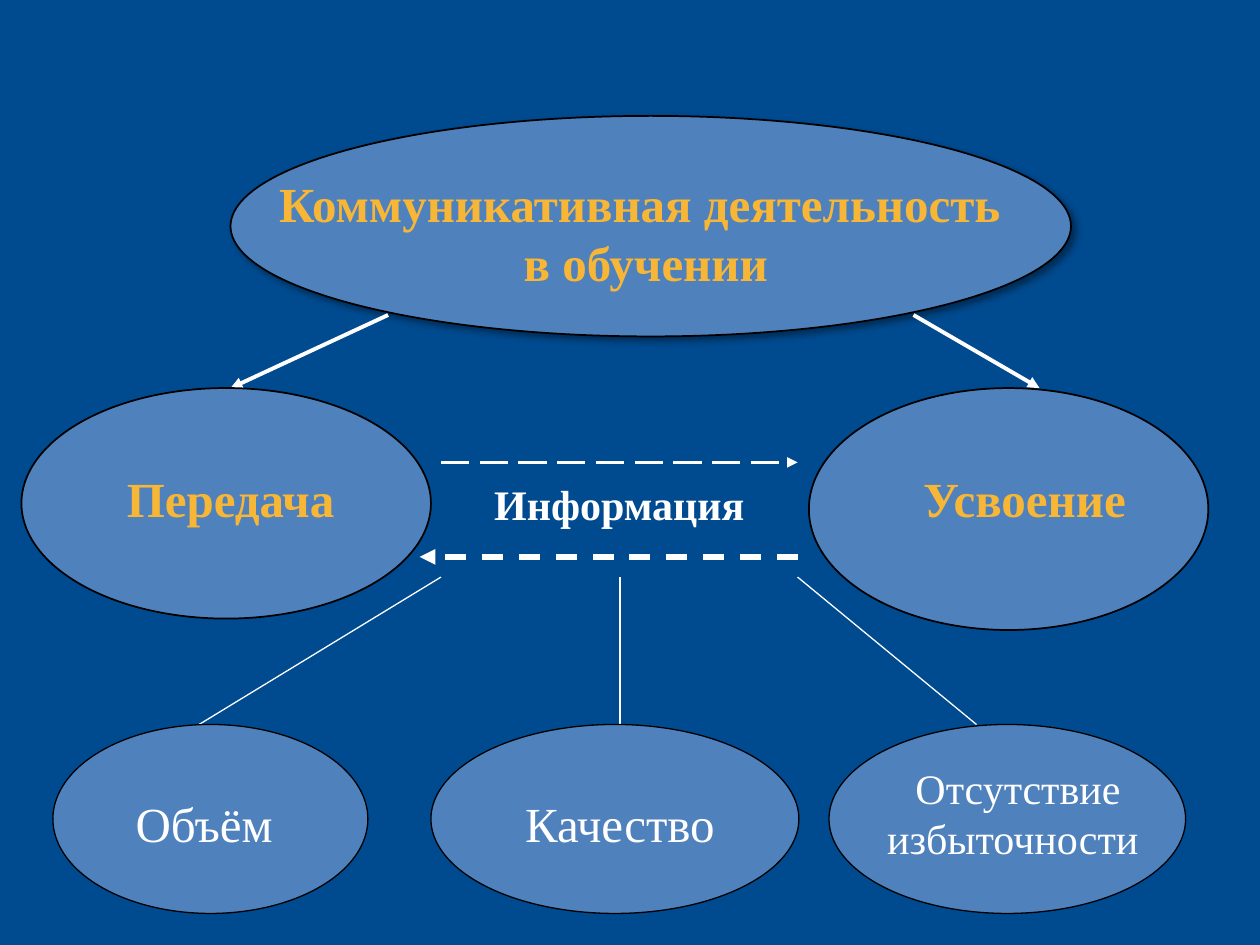
import lxml.etree
import pptx
import pptx.dml.color
import pptx.enum.dml
import pptx.enum.shapes
import pptx.enum.text
import pptx.oxml.ns
import pptx.util

Inches = pptx.util.Inches
Pt = pptx.util.Pt
RGBColor = pptx.dml.color.RGBColor
Dash = pptx.enum.dml.MSO_LINE
qn = pptx.oxml.ns.qn

NAVY = RGBColor(0x00, 0x4A, 0x8F)
BLUE = RGBColor(0x4F, 0x81, 0xBD)
GOLD = RGBColor(0xF7, 0xB6, 0x35)
WHITE = RGBColor(0xFF, 0xFF, 0xFF)
BLACK = RGBColor(0x00, 0x00, 0x00)
FONT = "Times New Roman"


def write_text(shape, text, size=28, color=WHITE, bold=False):
    """Fill a shape with centred paragraphs, one for each line of text."""
    frame = shape.text_frame
    frame.word_wrap = True
    frame.auto_size = pptx.enum.text.MSO_AUTO_SIZE.SHAPE_TO_FIT_TEXT
    frame.vertical_anchor = pptx.enum.text.MSO_ANCHOR.TOP
    frame.text = text
    for paragraph in frame.paragraphs:
        paragraph.alignment = pptx.enum.text.PP_ALIGN.CENTER
        for run in paragraph.runs:
            run.font.name = FONT
            run.font.size = Pt(size)
            run.font.bold = bold
            run.font.color.rgb = color


class DiagramSlide:
    """Holds the slide and draws each kind of element in one style."""

    def __init__(self, presentation):
        self.slide = presentation.slides.add_slide(presentation.slide_layouts[5])
        self.shapes = self.slide.shapes
        background = self.slide.background.fill
        background.solid()
        background.fore_color.rgb = NAVY

    def ellipse(self, left, top, width, height, line_width=1.0, shadow=False):
        shape = self.shapes.add_shape(
            pptx.enum.shapes.MSO_SHAPE.OVAL,
            Inches(left), Inches(top), Inches(width), Inches(height))
        shape.fill.solid()
        shape.fill.fore_color.rgb = BLUE
        shape.line.color.rgb = BLACK
        shape.line.width = Pt(line_width)
        shape.shadow.inherit = False
        if shadow:
            effects = shape.element.spPr.find(qn("a:effectLst"))
            outer = lxml.etree.SubElement(
                effects, qn("a:outerShdw"), blurRad=str(Pt(4)),
                dist=str(Pt(3)), dir="2700000", algn="tl", rotWithShape="0")
            color = lxml.etree.SubElement(outer, qn("a:srgbClr"), val=str(BLACK))
            lxml.etree.SubElement(color, qn("a:alpha"), val="40000")

    def line(self, start, end, width=0.75, dash=None, arrow=False):
        connector = self.shapes.add_connector(
            pptx.enum.shapes.MSO_CONNECTOR.STRAIGHT,
            *[Inches(value) for value in (*start, *end)])
        connector.line.color.rgb = WHITE
        connector.line.width = Pt(width)
        if dash is not None:
            connector.line.dash_style = dash
        properties = connector.element.spPr
        if arrow:
            outline = properties.find(qn("a:ln"))
            lxml.etree.SubElement(outline, qn("a:tailEnd"), type="triangle")
        lxml.etree.SubElement(properties, qn("a:effectLst"))

    def title(self, text, left, top, width, height, **style):
        title = self.shapes.title
        title.left, title.top = Inches(left), Inches(top)
        title.width, title.height = Inches(width), Inches(height)
        write_text(title, text, **style)
        # Bring the title in front of its ellipse
        title.element.getparent().append(title.element)

    def label(self, text, left, top, width, height, **style):
        box = self.shapes.add_textbox(
            Inches(left), Inches(top), Inches(width), Inches(height))
        write_text(box, text, **style)


def main():
    presentation = pptx.Presentation()
    presentation.slide_width = Inches(10)
    presentation.slide_height = Inches(7.5)
    diagram = DiagramSlide(presentation)

    # Main topic and arrows to its two sides
    diagram.ellipse(1.83, 0.92, 6.67, 1.75, shadow=True)
    diagram.line((3.08, 2.5), (1.83, 3.08), width=2.25, arrow=True)
    diagram.line((7.25, 2.5), (8.25, 3.08), width=2.25, arrow=True)
    diagram.ellipse(0.17, 3.08, 3.25, 1.83)
    diagram.ellipse(6.42, 3.08, 3.17, 1.92)

    # Exchange of information
    diagram.line((3.5, 3.67), (6.33, 3.67), width=2, dash=Dash.LONG_DASH, arrow=True)
    diagram.line((6.33, 4.42), (3.33, 4.42), width=3, dash=Dash.DASH, arrow=True)

    # Lines to the three properties of information
    for start, end in ((3.5, 1.58), (4.92, 4.92), (6.33, 7.75)):
        diagram.line((start, 4.58), (end, 5.75))
    for left, width in ((0.42, 2.5), (6.58, 2.83), (3.42, 2.92)):
        diagram.ellipse(left, 5.75, width, 1.5, line_width=0.75)

    # Wording
    diagram.title("Коммуникативная деятельность \nв обучении",
                  2, 1.33, 6.25, 1.04, color=GOLD, bold=True)
    diagram.label("Передача", 0.58, 3.67, 2.5, 0.57, color=GOLD, bold=True)
    diagram.label("Усвоение", 6.92, 3.67, 2.42, 0.57, color=GOLD, bold=True)
    diagram.label("Объём", 0.83, 6.25, 1.58, 0.57)
    diagram.label("Качество", 3.67, 6.25, 2.5, 0.57)
    diagram.label("Отсутствие избыточности ", 6.83, 6, 2.5, 0.91, size=24)
    diagram.label("Информация", 3.58, 3.75, 2.67, 0.51, size=24, bold=True)

    presentation.save("out.pptx")


if __name__ == "__main__":
    main()
